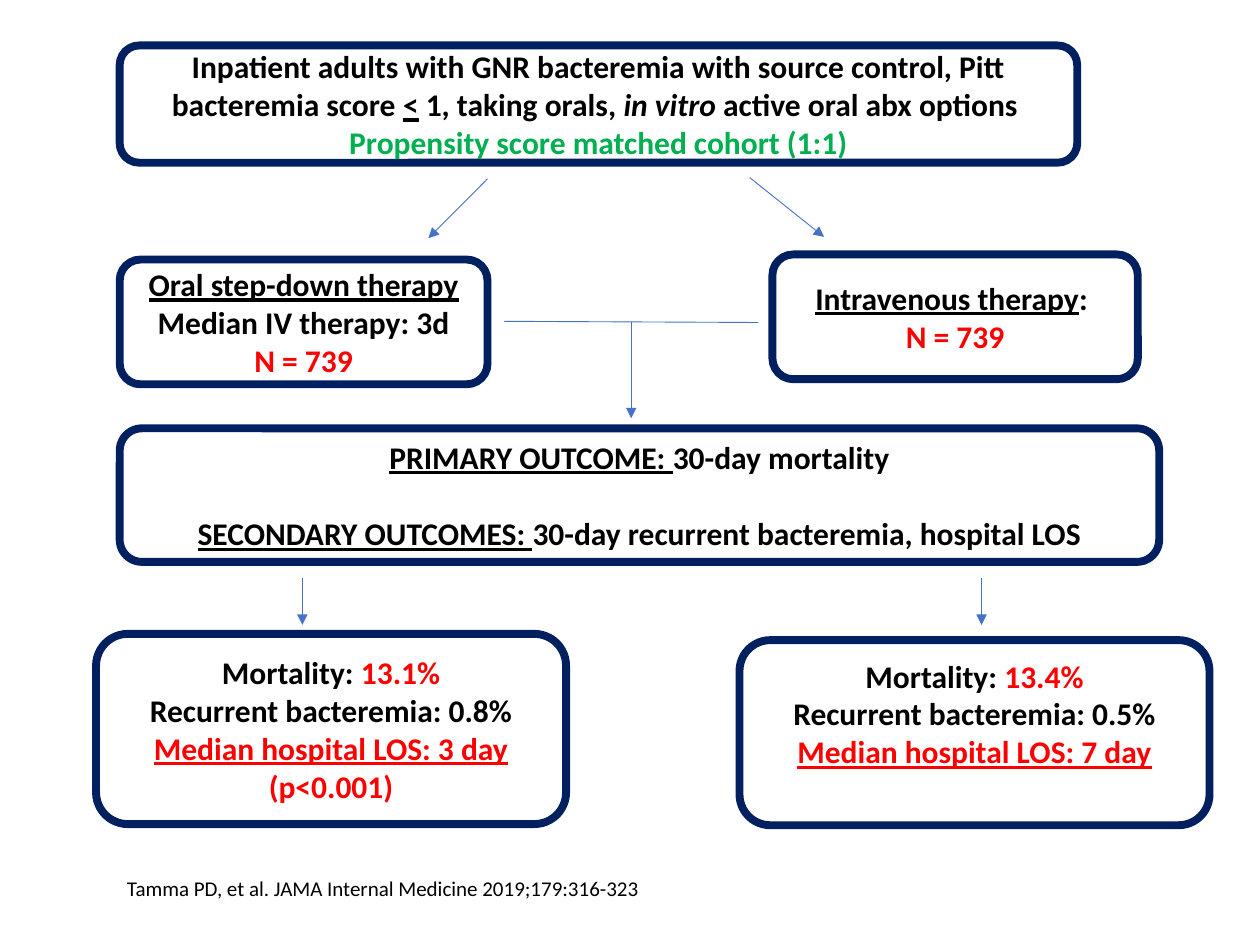
"""Build a one-slide flow chart of a matched cohort study of oral step-down therapy."""
from lxml import etree
from pptx import Presentation
from pptx.dml.color import RGBColor
from pptx.enum import shapes, text
from pptx.oxml.ns import qn
from pptx.util import Pt

COLORS = {"ink": "000000", "white": "FFFFFF", "navy": "002060",
          "red": "FF0000", "green": "00B050", "arrow": "4472C4"}
UNDER = {"underline": True}
RED = {"color": "red"}


def rgb(name):
    return RGBColor.from_string(COLORS[name])


def add_run(p, content, **fmt):
    r = p.add_run()
    r.text = content
    r.font.color.rgb = rgb(fmt.pop("color", "ink"))
    for key, value in ({"name": "Calibri", "size": Pt(18), "bold": True} | fmt).items():
        setattr(r.font, key, value)


prs = Presentation()
prs.slide_width, prs.slide_height = Pt(720), Pt(540)
s = prs.slides.add_slide(prs.slide_layouts[6])

LEFT = 68.4
LINE = 22
boxes = [
    ((LEFT, 26, 547.2, 67), 0, 0, [
        [("Inpatient adults with GNR bacteremia with source control, Pitt bacteremia score ", {}),
         ("<", UNDER), (" 1, taking orals, ", {}), ("in vitro ", {"italic": True}),
         ("active oral abx options ", {})],
        [("Propensity score matched cohort (1:1)", {"color": "green"})]]),
    ((LEFT, 148.3, 210.2, 71.3), 0, 0, [
        [("Oral step-down therapy", UNDER)],
        [("Median IV therapy: 3d", {})],
        [("N = 739", RED)]]),
    ((441.4, 145.4, 208.8, 71.3), 0, 0, [
        [("Intravenous therapy", UNDER), (": ", {})],
        [("N = 739", RED)]]),
    ((LEFT, 244.8, 594, 76.3), LINE, 0, [
        [("PRIMARY OUTCOME: ", UNDER), ("30-day mortality", {})],
        [("SECONDARY OUTCOMES: ", UNDER),
         ("30-day recurrent bacteremia, hospital LOS", {})]]),
    ((54.9, 362.2, 268.6, 108.7), 0, 0, [
        [("Mortality:", {}), (" 13.1%", RED)],
        [("Recurrent bacteremia: 0.8%", {})],
        [("Median hospital LOS: 3 day", RED | UNDER)],
        [("(p<0.001)", RED)]]),
    ((422.6, 365.8, 268.6, 105.8), 0, LINE, [
        [("Mortality:", {}), (" 13.4%", RED)],
        [("Recurrent bacteremia: 0.5%", {})],
        [("Median hospital LOS: 7 day", RED | UNDER)]]),
]
for place, gap, lift, lines in boxes:
    sp = s.shapes.add_shape(shapes.MSO_SHAPE.ROUNDED_RECTANGLE, *map(Pt, place))
    sp.shadow.inherit = False
    sp.fill.solid()
    sp.fill.fore_color.rgb = rgb("white")
    sp.line.color.rgb = rgb("navy")
    sp.line.width = Pt(4.5)
    tf = sp.text_frame
    tf.word_wrap = True
    tf.vertical_anchor = text.MSO_ANCHOR.MIDDLE
    tf.margin_bottom = Pt(3.6 + lift)
    for i, runs in enumerate(lines):
        p = tf.add_paragraph() if i else tf.paragraphs[0]
        p.alignment = text.PP_ALIGN.CENTER
        p.space_before = Pt(gap if i else 0)
        for content, fmt in runs:
            add_run(p, content, **fmt)

lines = [
    ((278.6, 102.2, 244.8, 136.1), True),
    ((428.4, 101.5, 470.9, 135.4), True),
    ((288, 183.6, 433.4, 184.3), False),
    ((360.7, 184, 360.7, 239), True),
    ((172.8, 330.5, 172.8, 357.1), True),
    ((560.9, 330.5, 560.9, 357.1), True),
]
for ends, has_head in lines:
    c = s.shapes.add_connector(shapes.MSO_CONNECTOR.STRAIGHT, *map(Pt, ends))
    c.line.color.rgb = rgb("arrow")
    c.line.width = Pt(0.5)
    if has_head:
        etree.SubElement(c.line._get_or_add_ln(), qn("a:tailEnd"), type="triangle")
    etree.SubElement(c._element.spPr, qn("a:effectLst"))

tf = s.shapes.add_textbox(*map(Pt, (65.5, 496.8, 427, 21.6))).text_frame
tf.word_wrap = True
tf.auto_size = text.MSO_AUTO_SIZE.SHAPE_TO_FIT_TEXT
add_run(tf.paragraphs[0], "Tamma PD, et al. JAMA Internal Medicine 2019;179:316-323",
        size=Pt(12), bold=False)

prs.save("out.pptx")
